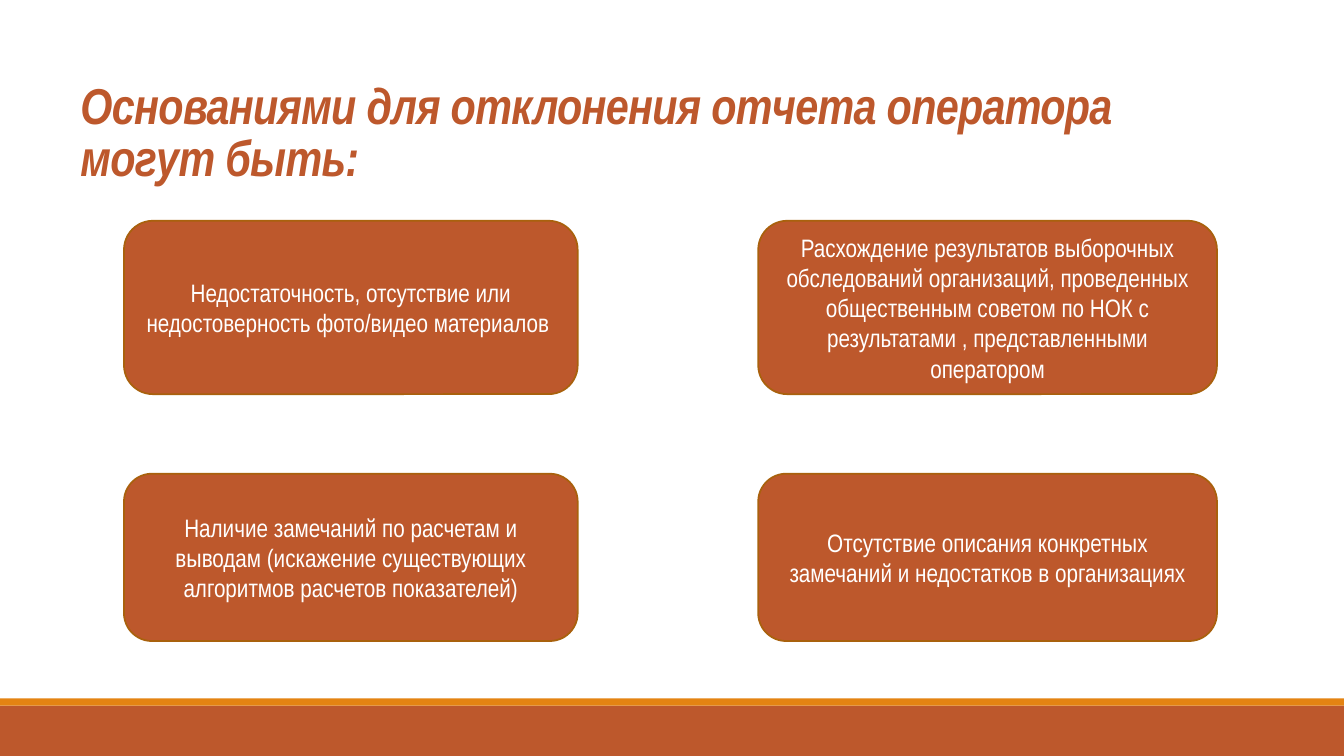
from pptx import Presentation
from pptx.dml.color import RGBColor
from pptx.enum.shapes import MSO_SHAPE
from pptx.enum.text import MSO_ANCHOR, PP_ALIGN
from pptx.util import Inches, Pt

RECT, ROUND = MSO_SHAPE.RECTANGLE, MSO_SHAPE.ROUNDED_RECTANGLE
MIDDLE, BOTTOM = MSO_ANCHOR.MIDDLE, MSO_ANCHOR.BOTTOM
LEFT, CENTER = PP_ALIGN.LEFT, PP_ALIGN.CENTER
RUST, AMBER, EDGE, WHITE = "BD582C", "E48312", "A9610D", "FFFFFF"
WIDE, HIGH = 13.33, 7.5

TITLE = "Основаниями для отклонения отчета оператора могут быть:"
CARDS = [
    ["Недостаточность, отсутствие или недостоверность фото/видео материалов ",
     "Расхождение результатов выборочных обследований организаций, проведенных "
     "общественным советом по НОК с результатами , представленными оператором"],
    ["Наличие замечаний по расчетам и выводам (искажение существующих "
     "алгоритмов расчетов показателей)",
     "Отсутствие описания конкретных замечаний и недостатков в организациях"],
]
COLS = [(0, 4.5), (6.29, 4.55)]
ROWS = [(0, 1.72), (2.51, 1.66)]
HEAD = {"size": Pt(36), "name": "Arial Narrow", "bold": True, "italic": True}
BODY = {"size": Pt(18), "name": "Arial Narrow"}


def paint(part, color):
    if hasattr(part, "solid"):
        part.solid()
        part.fore_color.rgb = RGBColor.from_string(color)
    else:
        part.color.rgb = RGBColor.from_string(color)


def block(slide, kind, box, color):
    shape = slide.shapes.add_shape(kind, *map(Inches, box))
    shape.shadow.inherit = False
    paint(shape.fill, color)
    shape.line.fill.background()
    return shape


def write(shape, text, style, color, anchor, align):
    frame = shape.text_frame
    frame.word_wrap = True
    frame.vertical_anchor = anchor
    para = frame.paragraphs[0]
    para.alignment = align
    run = para.add_run()
    run.text = text
    for key, value in style.items():
        setattr(run.font, key, value)
    paint(run.font, color)
    return para, run


def footer(slide, box):
    left, top, width, height = box
    strip = 0.07
    block(slide, RECT, (left, top + strip, width, height - strip), RUST)
    block(slide, RECT, (left, top, width, strip), AMBER)


def title(slide, box):
    area = slide.shapes.add_textbox(*map(Inches, box))
    para, run = write(area, TITLE, HEAD, RUST, BOTTOM, LEFT)
    para.line_spacing = 0.85
    run.font._element.set("spc", "-50")


def cards(slide, left, top):
    for (down, height), texts in zip(ROWS, CARDS):
        for (across, width), text in zip(COLS, texts):
            card = block(slide, ROUND, (left + across, top + down, width, height), RUST)
            paint(card.line, EDGE)
            card.line.width = Pt(1.25)
            write(card, text, BODY, WHITE, MIDDLE, CENTER)


def main():
    deck = Presentation()
    deck.slide_width, deck.slide_height = Inches(WIDE), Inches(HIGH)
    slide = deck.slides.add_slide(deck.slide_layouts[6])
    footer(slide, (0, HIGH - 0.57, WIDE, 0.57))
    title(slide, (0.7, 0.31, 10.94, 1.59))
    cards(slide, 1.23, 2.19)
    deck.save("out.pptx")


if __name__ == "__main__":
    main()
